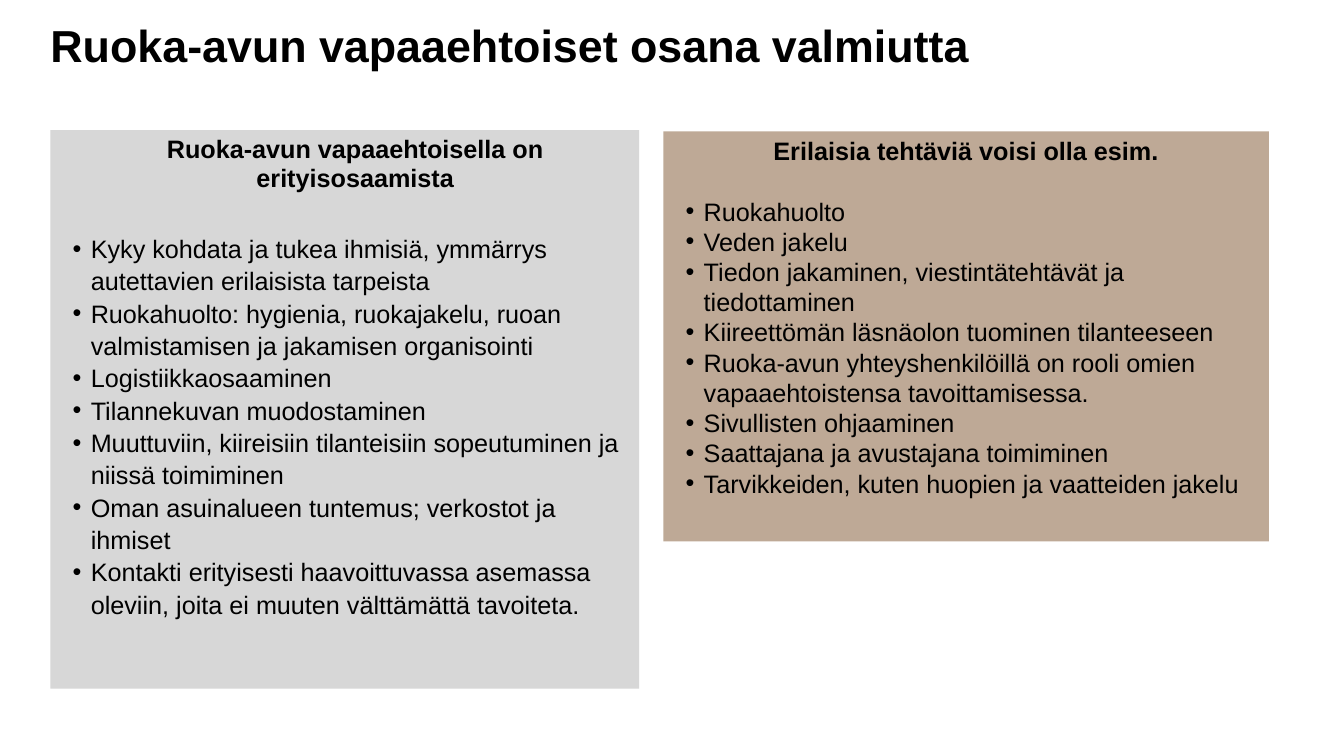
import dataclasses

import pptx
import pptx.dml.color
import pptx.enum.shapes
import pptx.enum.text
import pptx.oxml
import pptx.oxml.ns
import pptx.util

Pt = pptx.util.Pt
RGB = pptx.dml.color.RGBColor.from_string
ALIGN = pptx.enum.text.PP_ALIGN


@dataclasses.dataclass(frozen=True)
class Theme:
    """Colours, font and type sizes of the slide."""
    font: str = "Arial"
    ink: str = "000000"
    grey: str = "D7D7D7"
    tan: str = "BEA996"
    title: int = 32
    body: int = 18


THEME = Theme()

SKILLS = [
    "Kyky kohdata ja tukea ihmisiä, ymmärrys autettavien erilaisista tarpeista",
    "Ruokahuolto: hygienia, ruokajakelu, ruoan valmistamisen ja jakamisen organisointi",
    "Logistiikkaosaaminen",
    "Tilannekuvan muodostaminen",
    "Muuttuviin, kiireisiin tilanteisiin sopeutuminen ja niissä toimiminen",
    "Oman asuinalueen tuntemus; verkostot ja ihmiset",
    "Kontakti erityisesti haavoittuvassa asemassa oleviin, joita ei muuten välttämättä tavoiteta.",
]
TASKS = [
    "Ruokahuolto",
    "Veden jakelu",
    "Tiedon jakaminen, viestintätehtävät ja tiedottaminen",
    "Kiireettömän läsnäolon tuominen tilanteeseen",
    "Ruoka-avun yhteyshenkilöillä on rooli omien vapaaehtoistensa tavoittamisessa.",
    "Sivullisten ohjaaminen",
    "Saattajana ja avustajana toimiminen",
    "Tarvikkeiden, kuten huopien ja vaatteiden jakelu",
]


def apply(obj, values):
    """Set attributes of an object from a dict."""
    for name, value in values.items():
        setattr(obj, name, value)


def prepare_frame(tf, inset):
    """Give a text frame equal insets, wrapping and top anchoring."""
    apply(tf, {
        "word_wrap": True,
        "auto_size": pptx.enum.text.MSO_AUTO_SIZE.NONE,
        "vertical_anchor": pptx.enum.text.MSO_ANCHOR.TOP,
    })
    apply(tf, {f"margin_{side}": Pt(inset) for side in ("left", "top", "right", "bottom")})


def write(p, text, size, line, bold=False, align=ALIGN.LEFT, before=0):
    """Fill one paragraph and format it."""
    apply(p, {"alignment": align, "line_spacing": Pt(line),
              "space_before": Pt(before), "space_after": Pt(0)})
    r = p.add_run()
    r.text = text
    apply(r.font, {"name": THEME.font, "size": Pt(size), "bold": bold})
    r.font.color.rgb = RGB(THEME.ink)


def set_indent(p, left, first=0, bullet=None):
    """Indent a paragraph and optionally give it a bullet."""
    pPr = p._p.get_or_add_pPr()
    pPr.set("marL", str(Pt(left)))
    pPr.set("indent", str(Pt(first)))
    if bullet:
        ns = pptx.oxml.ns.nsdecls("a")
        pPr.append(pptx.oxml.parse_xml(f'<a:buFont {ns} typeface="{THEME.font}"/>'))
        pPr.append(pptx.oxml.parse_xml(f'<a:buChar {ns} char="{bullet}"/>'))


def add_title(s, box, text):
    """Place the slide title in its box."""
    sp = s.shapes.title
    apply(sp, dict(zip(("left", "top", "width", "height"), map(Pt, box))))
    prepare_frame(sp.text_frame, 0)
    write(sp.text_frame.paragraphs[0], text, THEME.title, 34.6, bold=True)


def add_panel(s, box, fill, heading, head_line, head_indent, items, line, gap):
    """Draw a filled panel with a centred heading above a bulleted list."""
    sp = s.shapes.add_shape(pptx.enum.shapes.MSO_SHAPE.RECTANGLE, *map(Pt, box))
    sp.shadow.inherit = False
    sp.fill.solid()
    sp.fill.fore_color.rgb = RGB(fill)
    sp.line.fill.background()
    tf = sp.text_frame
    prepare_frame(tf, 2.88)
    for i, text in enumerate(heading):
        p = tf.add_paragraph() if i else tf.paragraphs[0]
        set_indent(p, head_indent)
        write(p, text, THEME.body, head_line, bold=True, align=ALIGN.CENTER)
    for i, text in enumerate(items):
        p = tf.add_paragraph()
        set_indent(p, 26, -13, "•")
        write(p, text, THEME.body, line, before=0 if i else gap)


def main():
    """Build the slide and save it."""
    prs = pptx.Presentation()
    apply(prs, {"slide_width": Pt(960), "slide_height": Pt(540)})
    s = prs.slides.add_slide(prs.slide_layouts[5])
    add_title(s, (36, 16.6, 782.6, 35.3), "Ruoka-avun vapaaehtoiset osana valmiutta")
    add_panel(s, (36, 93, 420.5, 399), THEME.grey,
              ["Ruoka-avun vapaaehtoisella on", "erityisosaamista"], 20.8, 15,
              SKILLS, 23.1, 27.7)
    add_panel(s, (473.8, 93.8, 432.5, 293), THEME.tan,
              ["Erilaisia tehtäviä voisi olla esim."], 21.6, 0,
              TASKS, 21.6, 21.6)
    prs.save("out.pptx")


if __name__ == "__main__":
    main()
